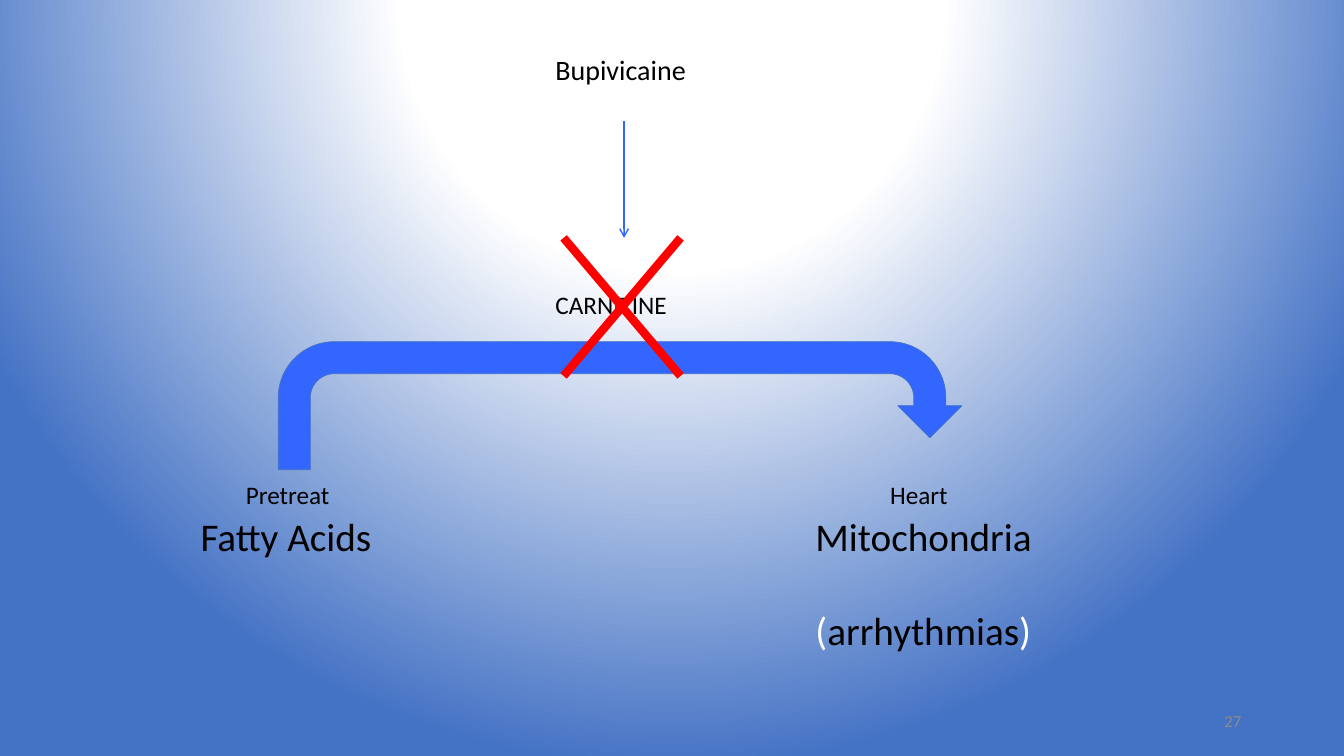
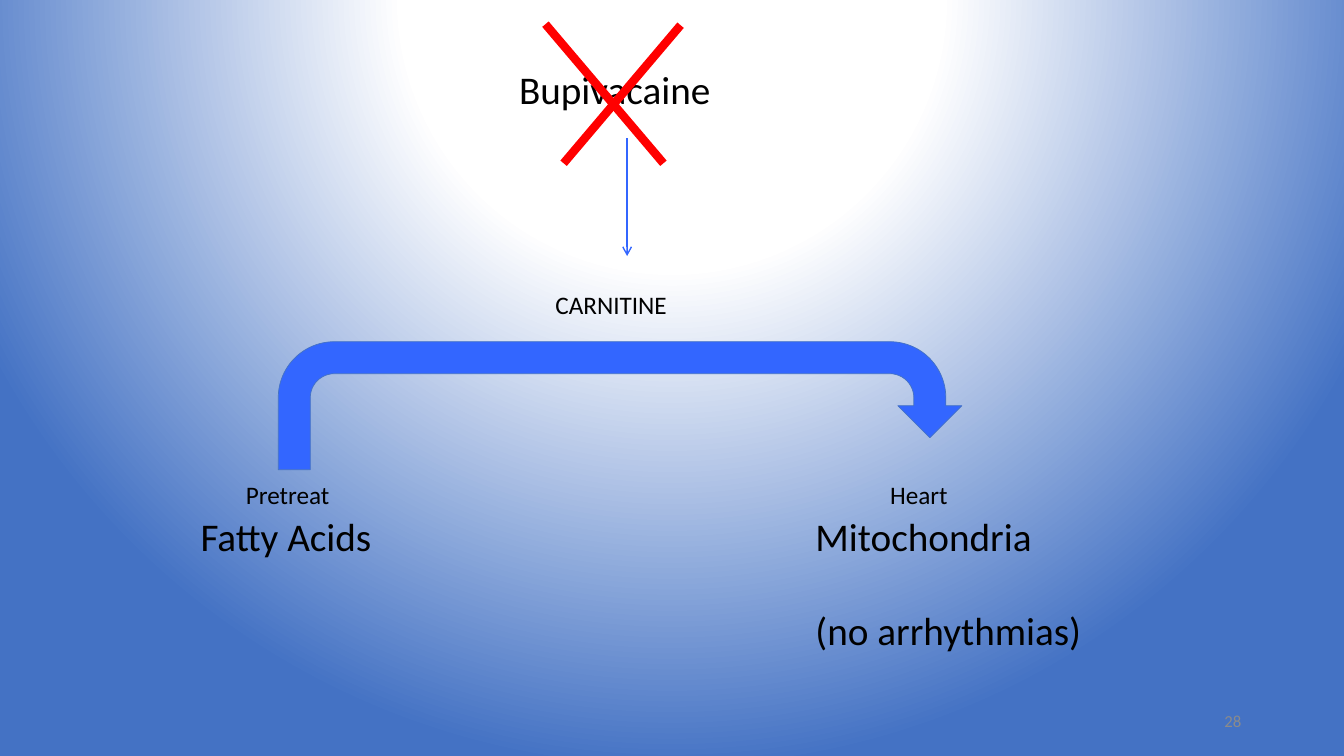
from lxml import etree
from pptx import Presentation, util as u
from pptx.dml.color import RGBColor
from pptx.enum import shapes, text
from pptx.oxml import parse_xml
from pptx.oxml.ns import nsdecls, qn

PX = 9144  # EMU in one px, 100 px to the inch
FONT = "Calibri"
COLORS = {
    "text": "000000",
    "white": "FFFFFF",
    "page": "4472C4",
    "flow": "3366FF",
    "cross": "FF0000",
    "number": "8B8B8B",
}


def add_label(slide, box, size, lines, color="text", **frame_format):
    """Each line is a list of (wording, colour or None) runs."""
    frame = slide.shapes.add_textbox(*(v * PX for v in box)).text_frame
    settings = {"word_wrap": False, "auto_size": text.MSO_AUTO_SIZE.SHAPE_TO_FIT_TEXT}
    for name, value in (settings | frame_format).items():
        setattr(frame, name, value)
    for i, runs in enumerate(lines):
        line = frame.paragraphs[0] if i == 0 else frame.add_paragraph()
        if i:
            line.space_before = u.Pt(34)
        for wording, run_color in runs:
            run = line.add_run()
            run.text = wording
            for name, value in {"name": FONT, "size": u.Pt(size)}.items():
                setattr(run.font, name, value)
            run.font.color.rgb = RGBColor.from_string(COLORS[run_color or color])
    return frame


def add_line(slide, ends, color, width, arrow=False):
    line = slide.shapes.add_connector(
        shapes.MSO_CONNECTOR.STRAIGHT, *(v * PX for v in ends))
    line.line.color.rgb = RGBColor.from_string(COLORS[color])
    line.line.width = u.Pt(width)
    properties = line.element.spPr
    if arrow:
        etree.SubElement(properties.find(qn("a:ln")), qn("a:tailEnd"), type="arrow")
    etree.SubElement(properties, qn("a:effectLst"))


prs = Presentation()
prs.slide_width, prs.slide_height = 1333 * PX, 750 * PX

# Shared background: a glow from above the slide
stops = "".join(
    f'<a:gs pos="{pos * 1000}"><a:srgbClr val="{COLORS[color]}"/></a:gs>'
    for pos, color in ((0, "white"), (35, "white"), (100, "page")))
glow = parse_xml(
    f'<p:bg {nsdecls("p", "a")}><p:bgPr><a:gradFill rotWithShape="1">'
    f'<a:gsLst>{stops}</a:gsLst><a:path path="circle">'
    '<a:fillToRect l="50000" t="-80000" r="50000" b="180000"/></a:path>'
    '</a:gradFill><a:effectLst/></p:bgPr></p:bg>')
master_content = prs.slide_master.element.find(qn("p:cSld"))
for plain in master_content.findall(qn("p:bg")):
    master_content.remove(plain)
master_content.insert(0, glow)

# Labels that stay the same: box, size, wording
FIXED_LABELS = [
    ((189, 503, 192, 57), 28, "Fatty Acids"),
    ((234, 471, 104, 40), 18, "Pretreat"),
    ((873, 471, 84, 40), 18, "Heart"),
    ((541, 282, 132, 40), 18, "CARNITINE"),
]

# What differs between the two slides
STAGES = [
    {
        "number": "27",
        "drug": ((541, 47, 151, 44), 20, "Bupivicaine"),
        "drug_arrow": (619, 120, 619, 236),
        "cross": [(559, 236, 675, 373), (675, 236, 559, 373)],
        "outcome_width": 237,
        "outcome": [("(", "white"), ("arrhythmias", None), (")", "white")],
    },
    {
        "number": "28",
        "drug": ((505, 60, 212, 57), 28, "Bupivacaine"),
        "drug_arrow": (622, 137, 622, 254),
        "cross": [(541, 24, 658, 162), (675, 25, 559, 162)],
        "outcome_width": 287,
        "outcome": [("(no arrhythmias)", None)],
    },
]

for stage in STAGES:
    slide = prs.slides.add_slide(prs.slide_layouts[6])

    # Transport from fatty acids to mitochondria
    transport = slide.shapes.add_shape(
        shapes.MSO_SHAPE.U_TURN_ARROW, *(v * PX for v in (276, 339, 678, 127)))
    transport.shadow.inherit = False
    transport.fill.solid()
    transport.fill.fore_color.rgb = RGBColor.from_string(COLORS["flow"])
    transport.line.color.rgb = RGBColor.from_string(COLORS["page"])
    transport.line.width = u.Pt(0.5)

    # Labels
    for box, size, wording in FIXED_LABELS + [stage["drug"]]:
        add_label(slide, box, size, [[(wording, None)]])
    add_label(slide, (799, 503, stage["outcome_width"], 151), 28,
              [[("Mitochondria", None)], stage["outcome"]])

    # Drug arrow and the cross over the blocked part
    add_line(slide, stage["drug_arrow"], "flow", 1, arrow=True)
    for stroke in stage["cross"]:
        add_line(slide, stroke, "cross", 6)

    # Slide number
    number = add_label(slide, (942, 695, 299, 40), 12, [[(stage["number"], None)]],
                       color="number", word_wrap=True,
                       auto_size=text.MSO_AUTO_SIZE.NONE,
                       vertical_anchor=text.MSO_ANCHOR.MIDDLE)
    number.paragraphs[0].alignment = text.PP_ALIGN.RIGHT

prs.save("out.pptx")
